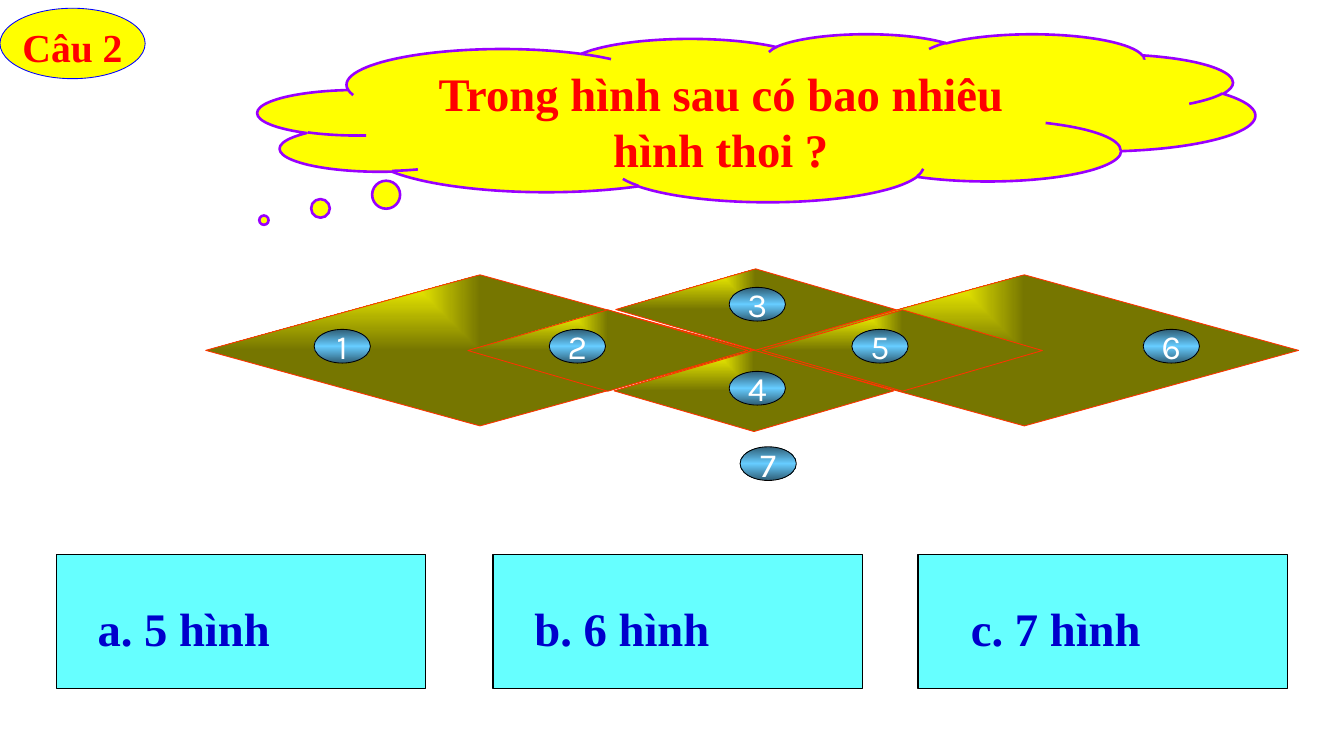
"""Build a quiz slide that asks how many rhombuses a figure holds."""
from lxml.etree import SubElement
from pptx import Presentation
from pptx.dml.color import RGBColor
from pptx.enum.shapes import MSO_SHAPE
from pptx.enum.text import MSO_ANCHOR, MSO_AUTO_SIZE, PP_ALIGN
from pptx.oxml.ns import qn
from pptx.util import Cm, Pt

COLOURS = {
    "yellow": "FFFF00", "olive": "767600", "purple": "9900FF",
    "red": "FF0000", "orange": "FF3300", "blue": "0000FF",
    "navy": "0000CC", "cyan": "66FFFF", "sky": "66CCFF",
    "steel": "2F5E76", "black": "000000", "white": "FFFFFF",
}
SERIF = "Times New Roman"
QUESTION_FONT = {"name": SERIF, "size": Pt(40), "bold": True}
LABEL_FONT = {"name": SERIF, "size": Pt(34), "bold": True}
BADGE_FONT = {"name": "Karla", "size": Pt(29), "bold": False}

LARGE, SMALL = (16.59, 4.57), (8.46, 2.46)
RHOMBUSES = [
    (6.22, 8.31, LARGE), (14.15, 9.37, SMALL), (22.68, 8.31, LARGE),
    (23.06, 9.37, SMALL), (18.62, 8.13, SMALL), (18.57, 10.59, SMALL),
]
BADGES = [
    (9.5, 9.96), (16.61, 9.96), (22.05, 8.69), (22.05, 11.23),
    (25.76, 9.96), (34.57, 9.96), (22.38, 13.51),
]
ANSWERS = [
    ("a. 5 hình", 1.7, 1.25), ("b. 6 hình", 14.91, 1.25),
    ("c. 7 hình", 27.76, 1.6),
]


def rgb(colour):
    return RGBColor.from_string(COLOURS[colour])


def set_attributes(target, values):
    for name, value in values.items():
        setattr(target, name, value)


def add_figure(shapes, kind, box, fill, line, width):
    shape = shapes.add_shape(kind, *map(Cm, box))
    shape.shadow.inherit = False
    if fill:
        shape.fill.solid()
        shape.fill.fore_color.rgb = rgb(fill)
    shape.line.color.rgb = rgb(line)
    shape.line.width = Pt(width)
    return shape


def set_gradient(shape, stops, from_corner=False):
    shape.fill.gradient()
    gradient = shape._element.spPr.find(qn("a:gradFill"))
    gradient.clear()
    stop_list = SubElement(gradient, qn("a:gsLst"))
    for position, colour in stops:
        stop = SubElement(stop_list, qn("a:gs"), pos=str(position * 1000))
        SubElement(stop, qn("a:srgbClr"), val=COLOURS[colour])
    if from_corner:
        direction = SubElement(gradient, qn("a:path"), {"path": "rect"})
        SubElement(direction, qn("a:fillToRect"), r="100000", b="100000")
    else:
        SubElement(gradient, qn("a:lin"), ang="5400000", scaled="1")


def write_text(shape, lines, font, colour, align=PP_ALIGN.CENTER, **frame_format):
    frame = shape.text_frame
    set_attributes(frame, {"auto_size": MSO_AUTO_SIZE.NONE, "word_wrap": True,
                           **frame_format})
    frame.text = "\n".join(lines)
    for paragraph in frame.paragraphs:
        paragraph.alignment = align
        set_attributes(paragraph.runs[0].font, font)
        paragraph.runs[0].font.color.rgb = rgb(colour)


def add_question(slide):
    cloud = add_figure(slide.shapes, MSO_SHAPE.CLOUD_CALLOUT,
                       (7.8, 1.02, 30.15, 5.08), "yellow", "purple", 2.25)
    cloud.adjustments[0], cloud.adjustments[1] = -0.494, 0.61
    title = slide.shapes.title
    set_attributes(title, {"left": Cm(11.94), "top": Cm(1.78),
                           "width": Cm(19.71), "height": Cm(3.3)})
    write_text(title, ["Trong hình sau có bao nhiêu", "hình thoi ?"],
               QUESTION_FONT, "red", vertical_anchor=MSO_ANCHOR.TOP,
               margin_top=Cm(0.18), margin_bottom=Cm(0.18))
    cloud._element.addnext(title._element)


def add_rhombuses(slide):
    group = slide.shapes.add_group_shape()
    for left, top, size in RHOMBUSES:
        rhombus = add_figure(group.shapes, MSO_SHAPE.FLOWCHART_DECISION,
                             (left, top, *size), None, "orange", 0.75)
        set_gradient(rhombus, [(0, "yellow"), (100, "olive")], from_corner=True)


def add_badge(slide, number, left, top):
    badge = add_figure(slide.shapes, MSO_SHAPE.OVAL, (left, top, 1.7, 1.02),
                       None, "black", 0.75)
    set_gradient(badge, [(0, "steel"), (50, "sky"), (100, "steel")])
    write_text(badge, [str(number)], BADGE_FONT, "white", word_wrap=False,
               vertical_anchor=MSO_ANCHOR.MIDDLE,
               margin_top=Cm(0.18), margin_bottom=Cm(0.18))


def add_answer(slide, text, left, indent):
    answer = add_figure(slide.shapes, MSO_SHAPE.RECTANGLE,
                        (left, 16.76, 11.18, 4.06), "cyan", "black", 1)
    write_text(answer, [text], QUESTION_FONT, "navy", PP_ALIGN.LEFT,
               vertical_anchor=MSO_ANCHOR.MIDDLE, margin_left=Cm(indent),
               margin_top=Cm(0.36), margin_bottom=Cm(0))


def add_question_label(slide):
    label = add_figure(slide.shapes, MSO_SHAPE.OVAL, (0, 0.25, 4.39, 2.13),
                       "yellow", "blue", 0.75)
    write_text(label, ["Câu 2"], LABEL_FONT, "red", word_wrap=False,
               vertical_anchor=MSO_ANCHOR.TOP)


def main():
    presentation = Presentation()
    set_attributes(presentation, {"slide_width": Cm(40.64),
                                  "slide_height": Cm(22.86)})
    slide = presentation.slides.add_slide(presentation.slide_layouts[5])
    add_question(slide)
    add_rhombuses(slide)
    for number, (left, top) in enumerate(BADGES, start=1):
        add_badge(slide, number, left, top)
    for text, left, indent in ANSWERS:
        add_answer(slide, text, left, indent)
    add_question_label(slide)
    presentation.save("out.pptx")


if __name__ == "__main__":
    main()
